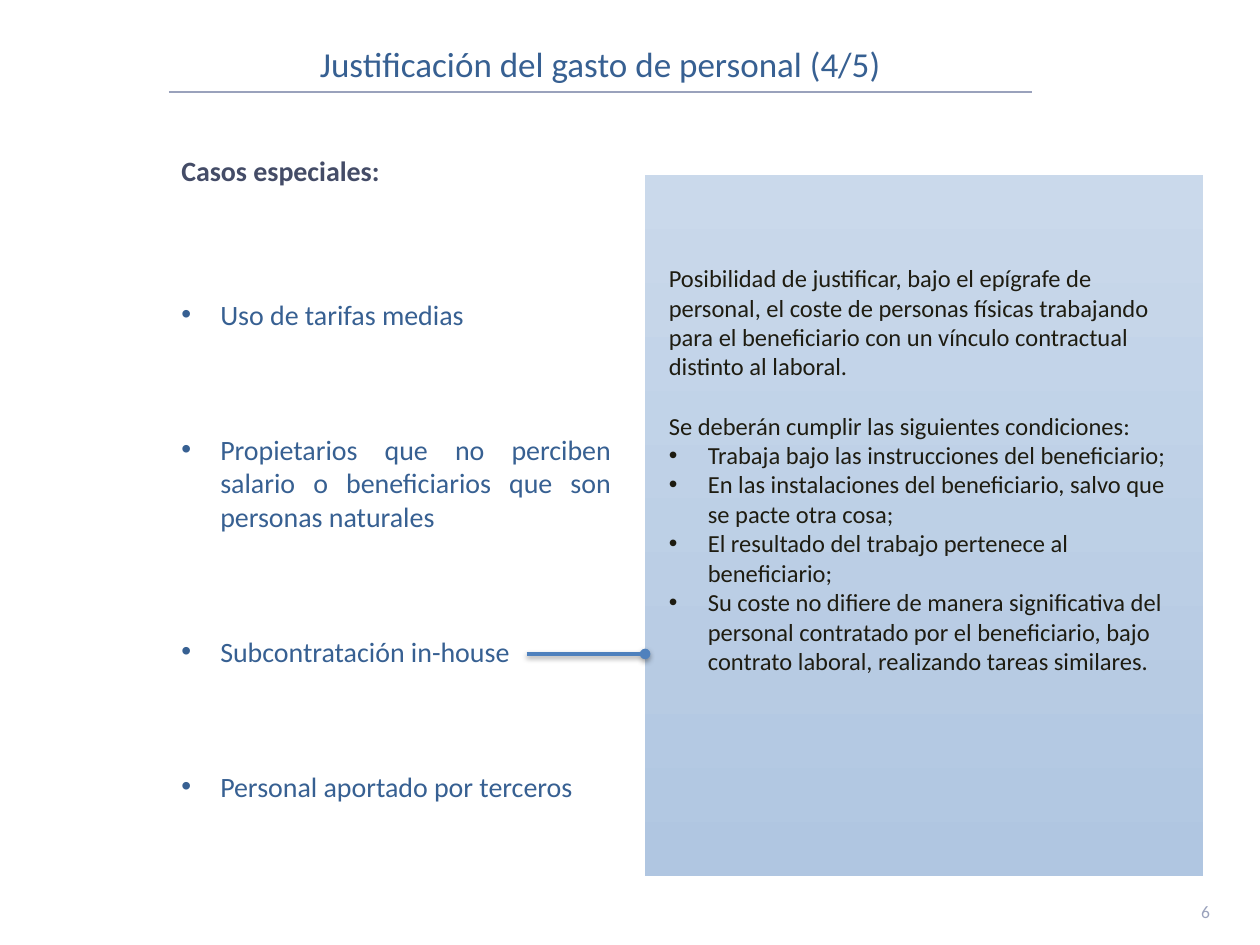
"""Build the slide on special cases of staff cost justification."""
from lxml.etree import SubElement
from pptx import Presentation
from pptx.dml.color import RGBColor
from pptx.enum.shapes import MSO_CONNECTOR, MSO_SHAPE
from pptx.enum.text import MSO_ANCHOR, PP_ALIGN
from pptx.oxml.ns import qn
from pptx.util import Inches, Pt

BLUE = RGBColor(0x37, 0x60, 0x92)
SLATE = RGBColor(0x44, 0x4C, 0x67)
GREY = RGBColor(0x9A, 0xA2, 0xBC)
INK = RGBColor(0x1E, 0x1C, 0x11)
LINK = RGBColor(0x4F, 0x81, 0xBD)
PALE = RGBColor(0xCA, 0xD9, 0xEB)
DEEP = RGBColor(0xB0, 0xC6, 0xE1)

TITLE = "Justificación del gasto de personal (4/5)"
HEAD = "Casos especiales:"
CASES = [
    "Uso de tarifas medias",
    "Propietarios que no perciben salario o beneficiarios que son personas naturales",
    "Subcontratación in-house",
    "Personal aportado por terceros",
]
INTRO = [
    "Posibilidad de justificar, bajo el epígrafe de personal, el coste de personas "
    "físicas trabajando para el beneficiario con un vínculo contractual distinto al laboral.",
    "Se deberán cumplir las siguientes condiciones:",
]
TERMS = [
    "Trabaja bajo las instrucciones del beneficiario;",
    "En las instalaciones del beneficiario, salvo que se pacte otra cosa;",
    "El resultado del trabajo pertenece al beneficiario;",
    "Su coste no difiere de manera significativa del personal contratado por el "
    "beneficiario, bajo contrato laboral, realizando tareas similares.",
]
LEFT, WIDE = 1.34, 3.61
INDENT = Inches(0.31)


def style(para, size, color, bold=False):
    for run in para.runs:
        font = run.font
        font.name, font.size, font.bold = "Calibri", Pt(size), bold
        font.color.rgb = color


def bullet(para):
    props = para._p.get_or_add_pPr()
    props.set("marL", str(INDENT))
    props.set("indent", str(-INDENT))
    SubElement(props, qn("a:buFont")).set("typeface", "Arial")
    SubElement(props, qn("a:buChar")).set("char", "•")


def add_text(slide, box, items, size, color, bold=False):
    frame = slide.shapes.add_textbox(*map(Inches, box)).text_frame
    frame.word_wrap = True
    for i, item in enumerate(items):
        para = frame.add_paragraph() if i else frame.paragraphs[0]
        para.text = item
        style(para, size, color, bold)
    return frame.paragraphs


def add_line(slide, x, y, end, color, width):
    line = slide.shapes.add_connector(
        MSO_CONNECTOR.STRAIGHT, Inches(x), Inches(y), Inches(end), Inches(y))
    line.line.color.rgb = color
    line.line.width = Pt(width)
    return line, SubElement(line._element.spPr, qn("a:effectLst"))


def add_title(slide):
    title = slide.shapes.title
    title.left, title.top, title.width, title.height = map(Inches, (LEFT, 0.3, 6.85, 0.42))
    frame = title.text_frame
    frame.text = TITLE
    frame.vertical_anchor = MSO_ANCHOR.BOTTOM
    para = frame.paragraphs[0]
    para.alignment, para.line_spacing = PP_ALIGN.CENTER, 0.8
    style(para, 20, BLUE)
    add_line(slide, LEFT, 0.73, 8.19, GREY, 1.5)


def add_cases(slide):
    head = add_text(slide, (LEFT, 1.24, WIDE, 0.4), [HEAD], 16, SLATE, True)
    head[0].line_spacing = 0.7
    cases = add_text(slide, (LEFT, 2.31, WIDE, 4.14), CASES, 16, BLUE)
    for i, para in enumerate(cases):
        bullet(para)
        if i:
            para.space_before = Pt(58)
    cases[1].alignment = PP_ALIGN.JUSTIFY


def add_panel(slide):
    panel = slide.shapes.add_shape(
        MSO_SHAPE.RECTANGLE, *map(Inches, (5.12, 1.39, 4.43, 5.56)))
    panel.shadow.inherit = False
    panel.line.fill.background()
    panel.fill.gradient()
    panel.fill.gradient_angle = 270
    for stop, color, place in zip(panel.fill.gradient_stops, (PALE, DEEP), (0, 1)):
        stop.color.rgb, stop.position = color, place


def add_link(slide):
    link, effects = add_line(slide, 4.18, 5.19, 5.12, LINK, 2)
    SubElement(link.line._get_or_add_ln(), qn("a:tailEnd")).set("type", "oval")
    shade = SubElement(effects, qn("a:outerShdw"), blurRad=str(Pt(3.1)),
                       dist=str(Pt(1.6)), dir="5400000", rotWithShape="0")
    black = SubElement(shade, qn("a:srgbClr"), val="000000")
    SubElement(black, qn("a:alpha"), val="38000")


def add_terms(slide):
    paras = add_text(slide, (5.21, 2.04, 4.26, 4.64), INTRO + TERMS, 14, INK)
    paras[1].space_before = Pt(17)
    for para in paras[len(INTRO):]:
        bullet(para)


def main():
    deck = Presentation()
    deck.slide_width, deck.slide_height = Inches(10), Inches(7.5)
    slide = deck.slides.add_slide(deck.slide_layouts[5])
    add_title(slide)
    add_cases(slide)
    add_panel(slide)
    add_link(slide)
    add_terms(slide)
    number = add_text(slide, (9.18, 7.1, 0.52, 0.29), ["6"], 10, GREY)
    number[0].alignment = PP_ALIGN.RIGHT
    deck.save("out.pptx")


if __name__ == "__main__":
    main()
